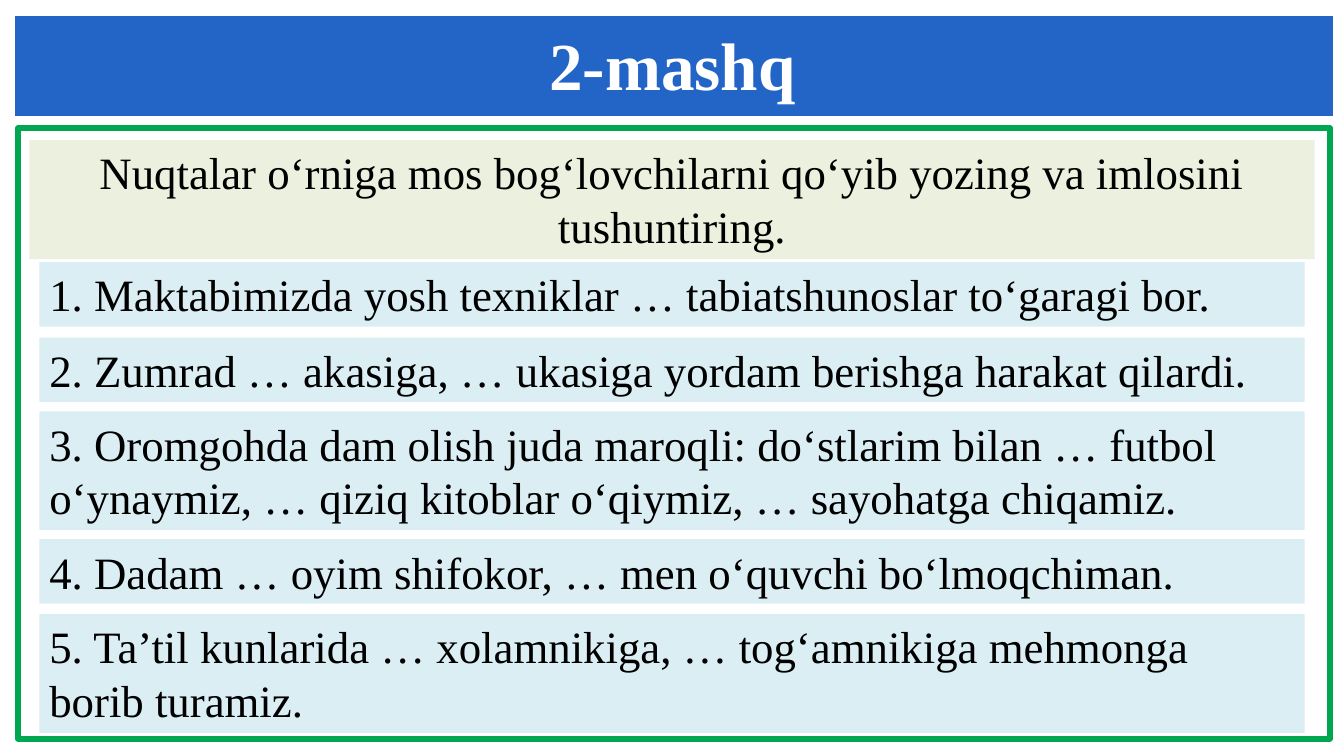
import pptx
import pptx.util
import pptx.dml.color
import pptx.enum.shapes
import pptx.enum.text

Inches = pptx.util.Inches
Pt = pptx.util.Pt
RGB = pptx.dml.color.RGBColor.from_string
ALIGN = pptx.enum.text.PP_ALIGN

theme = {
    "font": "Times New Roman",
    "title_size": 48, "body_size": 32,
    "banner": "2365C7", "frame": "00A650",
    "task": "EBF1DE", "sentence": "DBEEF4",
    "light": "FFFFFF", "dark": "000000",
}

prs = pptx.Presentation()
prs.slide_width, prs.slide_height = Inches(13.33), Inches(7.5)
s = prs.slides.add_slide(prs.slide_layouts[6])


def add_box(x, y, w, h, fill=None):
    sp = s.shapes.add_shape(pptx.enum.shapes.MSO_SHAPE.RECTANGLE,
                            Inches(x), Inches(y), Inches(w), Inches(h))
    sp.shadow.inherit = False
    sp.line.fill.background()
    if fill:
        sp.fill.solid()
        sp.fill.fore_color.rgb = RGB(theme[fill])
    else:
        sp.fill.background()
    return sp


def write(sp, text, size, color, align, bold=False):
    tf = sp.text_frame
    tf.word_wrap = True
    tf.vertical_anchor = pptx.enum.text.MSO_ANCHOR.TOP
    p = tf.paragraphs[0]
    p.text = text
    p.alignment = align
    r = p.runs[0]
    r.font.name = theme["font"]
    r.font.size = Pt(theme[size])
    r.font.bold = bold
    r.font.color.rgb = RGB(theme[color])


# Green frame
frame = add_box(0.18, 1.27, 13.01, 6.06)
frame.line.color.rgb = RGB(theme["frame"])
frame.line.width = Pt(4)

# Banner and title
add_box(0.15, 0.16, 13.07, 0.99, "banner")
title = s.shapes.add_textbox(Inches(0.29), Inches(0.23), Inches(12.76), Inches(0.81))
tf = title.text_frame
tf.margin_left = tf.margin_top = tf.margin_right = tf.margin_bottom = 0
write(title, "2-mashq", "title_size", "light", ALIGN.CENTER, bold=True)

# Task
task = add_box(0.29, 1.39, 12.75, 1.18, "task")
write(task, "Nuqtalar o‘rniga mos bog‘lovchilarni qo‘yib yozing va imlosini tushuntiring.",
      "body_size", "dark", ALIGN.CENTER)

# Sentences: top, number of lines, text
line_heights = {1: 0.64, 2: 1.18}
sentences = [
    (2.6, 1, "1. Maktabimizda yosh texniklar … tabiatshunoslar to‘garagi bor."),
    (3.35, 1, "2. Zumrad … akasiga, … ukasiga yordam berishga harakat qilardi."),
    (4.08, 2, "3. Oromgohda dam olish juda maroqli: do‘stlarim bilan … futbol "
              "o‘ynaymiz, … qiziq kitoblar o‘qiymiz, … sayohatga chiqamiz."),
    (5.35, 1, "4. Dadam … oyim shifokor, … men o‘quvchi bo‘lmoqchiman."),
    (6.09, 2, "5. Ta’til kunlarida … xolamnikiga, … tog‘amnikiga mehmonga borib turamiz."),
]
for top, lines, text in sentences:
    sp = add_box(0.39, top, 12.55, line_heights[lines], "sentence")
    write(sp, text, "body_size", "dark", ALIGN.LEFT)

prs.save("out.pptx")
